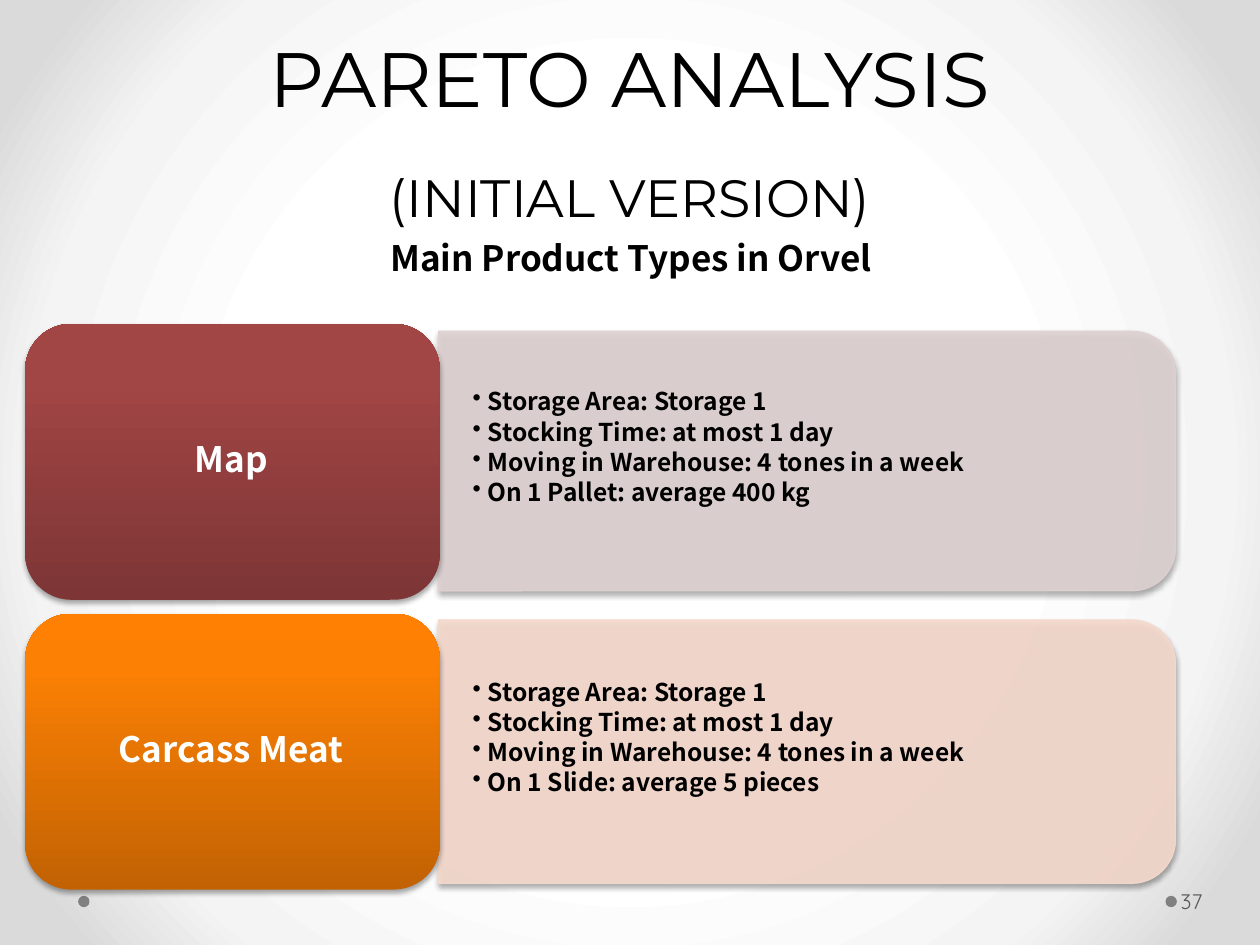
import pptx
import pptx.dml.color
import pptx.enum.shapes
import pptx.enum.text
import pptx.oxml
import pptx.oxml.ns
import pptx.util

Inches = pptx.util.Inches
Pt = pptx.util.Pt
qn = pptx.oxml.ns.qn
Shapes = pptx.enum.shapes.MSO_SHAPE
Align = pptx.enum.text.PP_ALIGN
Anchor = pptx.enum.text.MSO_ANCHOR

COLORS = {
    "black": "000000",
    "white": "FFFFFF",
    "dot": "808080",
    "number": "595959",
    "map_panel": "DED1D1",
    "meat_panel": "F5D9CC",
}
BACKGROUND = [(50, "FFFFFF"), (76, "F4F4F4"), (92, "DADADA")]
MAP_GRADIENT = [(0, "7D3535"), (80, "A24545"), (100, "A44343")]
MEAT_GRADIENT = [(0, "C26203"), (80, "FB8004"), (100, "FF8002")]
CIRCLE = '<a:path path="circle"><a:fillToRect l="50000" t="50000" r="50000" b="50000"/></a:path>'
UPWARD = '<a:lin ang="16200000" scaled="0"/>'
TITLE_FONT = "Montserrat"
BODY_FONT = "Noto Sans CJK SC"
NUMBER_FONT = "Quicksand"


def make_element(markup):
    head, tail = markup.split(">", 1)
    slash = "/" if head.endswith("/") else ""
    return pptx.oxml.parse_xml(f"{head.rstrip('/')} {pptx.oxml.ns.nsdecls('a')}{slash}>{tail}")


class SlideBuilder:
    def __init__(self, slide):
        self.slide = slide

    def gradient(self, fill, element, stops, direction):
        fill.gradient()
        gradient = element.find(".//" + qn("a:gradFill"))
        for child in list(gradient):
            gradient.remove(child)
        marks = "".join(
            f'<a:gs pos="{position * 1000}"><a:srgbClr val="{color}"/></a:gs>'
            for position, color in stops
        )
        gradient.append(make_element(f"<a:gsLst>{marks}</a:gsLst>"))
        gradient.append(make_element(direction))

    def background(self, stops):
        self.gradient(self.slide.background.fill, self.slide._element, stops, CIRCLE)

    def shape(self, kind, box, color=None, stops=None, shadow=False):
        shape = self.slide.shapes.add_shape(kind, *map(Inches, box))
        shape.shadow.inherit = False
        shape.line.fill.background()
        if stops:
            self.gradient(shape.fill, shape._element.spPr, stops, UPWARD)
        else:
            shape.fill.solid()
            shape.fill.fore_color.rgb = pptx.dml.color.RGBColor.from_string(COLORS[color])
        if shadow:
            shape._element.spPr.find(qn("a:effectLst")).append(make_element(
                f'<a:outerShdw blurRad="{Pt(3.1)}" dist="{Pt(1.8)}" dir="5400000" rotWithShape="0">'
                '<a:srgbClr val="000000"><a:alpha val="35000"/></a:srgbClr></a:outerShdw>'))
        return shape

    def panel(self, box, color):
        left, top, width, height = box
        upright = (left + (width - height) / 2, top + (height - width) / 2, height, width)
        shape = self.shape(Shapes.ROUND_2_SAME_RECTANGLE, upright, color, shadow=True)
        shape.rotation = 90
        shape.line.width = Pt(0.75)
        shape.line.color.rgb = pptx.dml.color.RGBColor.from_string(COLORS[color])
        for tint in shape._element.spPr.findall(".//" + qn("a:solidFill") + "/" + qn("a:srgbClr")):
            tint.append(make_element('<a:alpha val="90000"/>'))

    def text(self, box, paragraphs, font, color="black", bold=False, align=Align.CENTER,
             anchor=Anchor.MIDDLE, insets=(0.1, 0.05, 0.1, 0.05), spacing=None, bullet=False):
        frame = self.slide.shapes.add_textbox(*map(Inches, box)).text_frame
        frame.word_wrap = True
        frame.vertical_anchor = anchor
        frame.margin_left, frame.margin_top, frame.margin_right, frame.margin_bottom = map(Inches, insets)
        for index, runs in enumerate(paragraphs):
            paragraph = frame.add_paragraph() if index else frame.paragraphs[0]
            paragraph.alignment = align
            paragraph.line_spacing = spacing
            if bullet:
                properties = paragraph._p.get_or_add_pPr()
                properties.set("marL", str(Inches(0.12)))
                properties.set("indent", str(Inches(-0.12)))
                properties.append(make_element('<a:buChar char="•"/>'))
            for position, (words, size) in enumerate(runs):
                if position:
                    paragraph.add_line_break()
                run = paragraph.add_run()
                run.text = words
                run.font.size = Pt(size)
                run.font.name = font
                run.font.bold = bold
                run.font.color.rgb = pptx.dml.color.RGBColor.from_string(COLORS[color])

    def product(self, top, name, stops, panel_box, panel_color, facts):
        self.panel(panel_box, panel_color)
        left, panel_top, width, height = panel_box
        self.text((left, panel_top + 0.1, width - 0.1, height - 0.2),
                  [[(fact, 14)] for fact in facts], BODY_FONT, bold=True, align=Align.LEFT,
                  insets=(0.27, 0.14, 0.27, 0.38), spacing=Pt(17.2), bullet=True)
        self.shape(Shapes.ROUNDED_RECTANGLE, (0.2, top, 3.29, 2.19), stops=stops, shadow=True)
        self.text((0.3, top + 0.1, 3.07, 1.98), [[(name, 20)]], BODY_FONT, "white", True,
                  insets=(0.08, 0.04, 0.08, 0.04), spacing=0.9)


def main():
    presentation = pptx.Presentation()
    presentation.slide_width = Inches(10)
    presentation.slide_height = Inches(7.5)
    builder = SlideBuilder(presentation.slides.add_slide(presentation.slide_layouts[6]))
    builder.background(BACKGROUND)

    for left in (9.25, 0.62):
        builder.shape(Shapes.OVAL, (left, 7.11, 0.09, 0.09), "dot")
    builder.text((0.5, 0.21, 9, 1.65), [[("PARETO ANALYSIS", 44), ("(INITIAL VERSION)", 30)]],
                 TITLE_FONT, anchor=Anchor.BOTTOM, spacing=Pt(60))
    builder.text((0.51, 1.39, 9, 5.91), [[("Main Product Types in Orvel", 20)]], BODY_FONT,
                 bold=True, anchor=Anchor.TOP, insets=(0.1, 0.49, 0.1, 0.05))
    builder.text((9.34, 6.95, 0.61, 0.4), [[("37", 12)]], NUMBER_FONT, "number",
                 align=Align.LEFT, insets=(0.03, 0.05, 0.05, 0.05))

    shared_facts = [
        "Storage Area: Storage 1",
        "Stocking Time: at most 1 day",
        "Moving in Warehouse: 4 tones in a week",
    ]
    builder.product(2.57, "Map", MAP_GRADIENT, (3.48, 2.63, 5.85, 2.06), "map_panel",
                    shared_facts + ["On 1 Pallet: average 400 kg"])
    builder.product(4.87, "Carcass Meat", MEAT_GRADIENT, (3.48, 4.92, 5.85, 2.09), "meat_panel",
                    shared_facts + ["On 1 Slide: average 5 pieces"])
    presentation.save("out.pptx")


if __name__ == "__main__":
    main()
